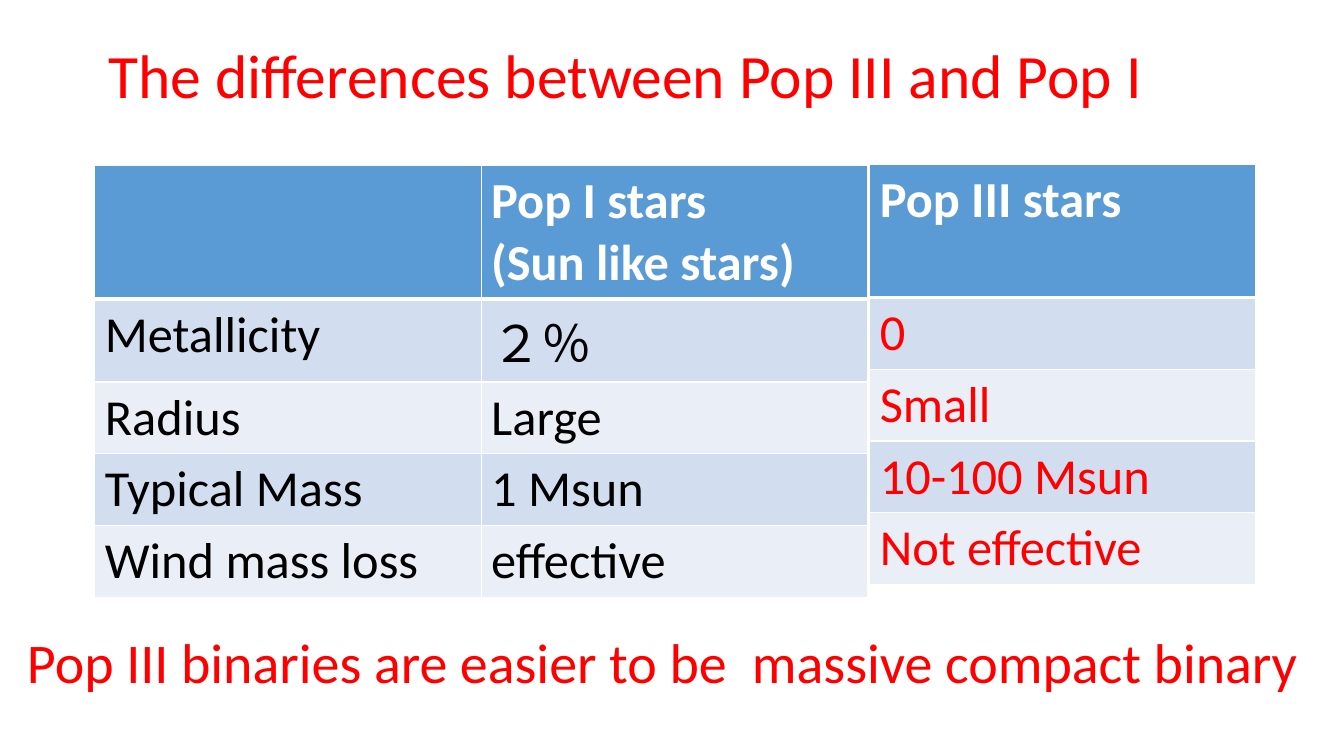
from pptx import Presentation
from pptx.dml.color import RGBColor
from pptx.enum.text import MSO_ANCHOR, PP_ALIGN
from pptx.oxml import parse_xml
from pptx.oxml.ns import nsdecls
from pptx.util import Pt

FONT = "Calibri"
RED = RGBColor(0xFF, 0x00, 0x00)
BLACK = RGBColor(0x00, 0x00, 0x00)
WHITE = RGBColor(0xFF, 0xFF, 0xFF)
HEADER_BLUE = RGBColor(0x5B, 0x9B, 0xD5)
BANDS = (RGBColor(0xD2, 0xDE, 0xEF), RGBColor(0xEA, 0xEF, 0xF7))

COLUMN_WIDTH = 276
HEADER_HEIGHT = 95
ROW_HEIGHT = 51

POP_I_ROWS = [
    ("", "Pop I stars\n(Sun like stars)"),
    ("Metallicity", "２％"),
    ("Radius", "Large"),
    ("Typical Mass", "1 Msun"),
    ("Wind mass loss", "effective"),
]
POP_III_ROWS = [
    ("Pop III stars",),
    ("0",),
    ("Small",),
    ("10-100 Msun",),
    ("Not effective",),
]


def set_font(p, size, color, bold=False):
    p.font.name = FONT
    p.font.size = Pt(size)
    p.font.color.rgb = color
    p.font.bold = bold


def set_borders(cell, bottom):
    tc_pr = cell._tc.get_or_add_tcPr()
    widths = {"lnL": 1, "lnR": 1, "lnT": 1, "lnB": bottom}
    for i, (side, width) in enumerate(widths.items()):
        tc_pr.insert(i, parse_xml(
            f'<a:{side} {nsdecls("a")} w="{Pt(width)}"><a:solidFill>'
            f'<a:srgbClr val="{WHITE}"/></a:solidFill></a:{side}>'))


def add_star_table(slide, left, top, rows, heights, color):
    cols = len(rows[0])
    table = slide.shapes.add_table(
        len(rows), cols, Pt(left), Pt(top),
        Pt(COLUMN_WIDTH * cols), Pt(sum(heights))).table
    for column in table.columns:
        column.width = Pt(COLUMN_WIDTH)
    for i, (texts, height) in enumerate(zip(rows, heights)):
        table.rows[i].height = Pt(height)
        header = i == 0
        for j, text in enumerate(texts):
            cell = table.cell(i, j)
            cell.fill.solid()
            cell.fill.fore_color.rgb = HEADER_BLUE if header else BANDS[(i - 1) % 2]
            set_borders(cell, 3 if header else 1)
            cell.text_frame.text = text
            for p in cell.text_frame.paragraphs:
                set_font(p, 36, WHITE if header else color, header)


def add_statement(slide, left, top, width, height, text, size):
    tf = slide.shapes.add_textbox(Pt(left), Pt(top), Pt(width), Pt(height)).text_frame
    tf.word_wrap = True
    tf.text = text
    set_font(tf.paragraphs[0], size, RED)
    return tf


def add_title(slide, left, top, width, height, text):
    tf = add_statement(slide, left, top, width, height, text, 44)
    tf.vertical_anchor = MSO_ANCHOR.MIDDLE
    p = tf.paragraphs[0]
    p.alignment = PP_ALIGN.CENTER
    p.line_spacing = 0.9


def main():
    prs = Presentation()
    prs.slide_width, prs.slide_height = Pt(960), Pt(540)
    slide = prs.slides.add_slide(prs.slide_layouts[6])
    heights = [HEADER_HEIGHT] + [ROW_HEIGHT] * 4
    pop_i_heights = [HEADER_HEIGHT, 59] + [ROW_HEIGHT] * 3
    add_star_table(slide, 67.7, 118.3, POP_I_ROWS, pop_i_heights, BLACK)
    add_star_table(slide, 621.2, 117.5, POP_III_ROWS, heights, RED)
    add_title(slide, 0, 3.6, 894, 104.4, "The differences between Pop III and Pop I")
    add_statement(slide, 12.2, 445, 938, 55.4,
                  "Pop III binaries are easier to be  massive compact binary", 40)
    prs.save("out.pptx")


if __name__ == "__main__":
    main()
